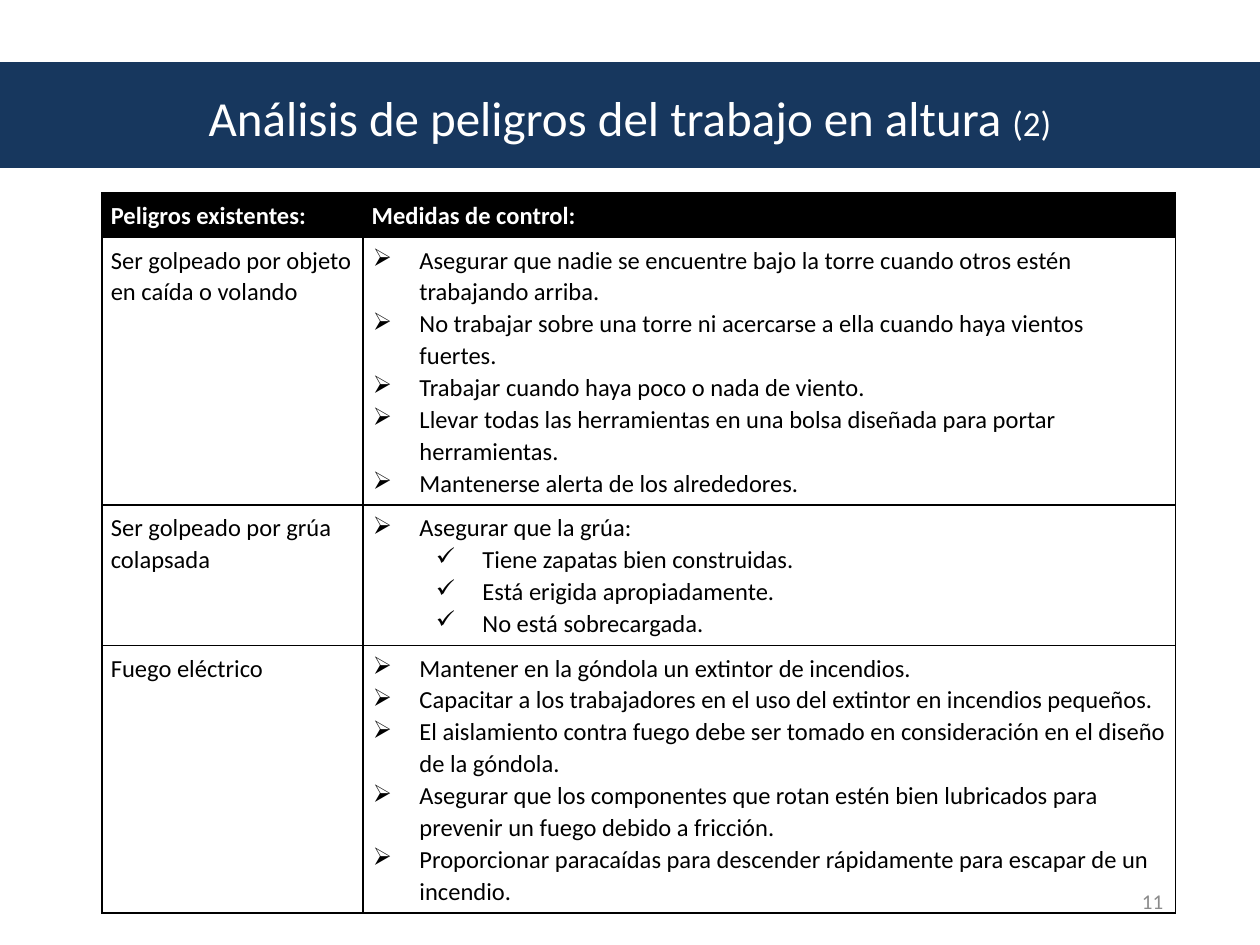
from dataclasses import dataclass

from lxml import etree
from pptx import Presentation
from pptx.dml.color import RGBColor
from pptx.enum.shapes import MSO_SHAPE
from pptx.enum.text import MSO_ANCHOR, PP_ALIGN
from pptx.oxml.ns import qn
from pptx.util import Inches, Pt

RECTANGLE = MSO_SHAPE.RECTANGLE
MIDDLE = MSO_ANCHOR.MIDDLE
LEFT, CENTER, RIGHT = PP_ALIGN.LEFT, PP_ALIGN.CENTER, PP_ALIGN.RIGHT
TITLE_ONLY = 5


@dataclass(frozen=True)
class Theme:
    """Colours, type sizes and spacing of the slide."""

    font: str = "Calibri"
    band: str = "17375E"
    light: str = "FFFFFF"
    dark: str = "000000"
    muted: str = "8B8B8B"
    title_size: float = 28
    part_size: float = 20
    body_size: float = 14
    number_size: float = 12
    line_spacing: float = 1.07
    border: float = 0.96


THEME = Theme()
SLIDE_WIDTH, SLIDE_HEIGHT = 10, 7.5
BAND_BOX = (0, 0.5, SLIDE_WIDTH, 0.83)
TITLE_BOX = (0.5, 0.3, 9, 1.25)
TABLE_BOX = (0.81, 1.53, 8.52, 5.26)
NUMBER_BOX = (7, 6.95, 2.33, 0.4)
COLUMN_WIDTHS = (2.07, 6.45)
ROW_HEIGHTS = (0.33, 1.87, 1.02, 2.04)
BULLETS = ("➢", "✓")
FIRST_INDENT, LEVEL_INDENT, HANGING = 0.38, 0.5, 0.37

HEADINGS = ("Peligros existentes:", "Medidas de control:")
HAZARDS = (
    ("Ser golpeado por objeto en caída o volando", (
        (0, "Asegurar que nadie se encuentre bajo la torre cuando otros estén trabajando arriba."),
        (0, "No trabajar sobre una torre ni acercarse a ella cuando haya vientos fuertes."),
        (0, "Trabajar cuando haya poco o nada de viento."),
        (0, "Llevar todas las herramientas en una bolsa diseñada para portar herramientas."),
        (0, "Mantenerse alerta de los alrededores."),
    )),
    ("Ser golpeado por grúa colapsada", (
        (0, "Asegurar que la grúa:"),
        (1, "Tiene zapatas bien construidas."),
        (1, "Está erigida apropiadamente."),
        (1, "No está sobrecargada."),
    )),
    ("Fuego eléctrico", (
        (0, "Mantener en la góndola un extintor de incendios."),
        (0, "Capacitar a los trabajadores en el uso del extintor en incendios pequeños."),
        (0, "El aislamiento contra fuego debe ser tomado en consideración en el diseño de la góndola."),
        (0, "Asegurar que los componentes que rotan estén bien lubricados para prevenir un fuego "
            "debido a fricción."),
        (0, "Proporcionar paracaídas para descender rápidamente para escapar de un incendio."),
    )),
)


def inches(box):
    """Convert a box in inches to lengths."""
    return [Inches(length) for length in box]


def color(value):
    """Return the colour for a hexadecimal value."""
    return RGBColor.from_string(value)


def format_paragraph(paragraph, size, font_color, bold=False, alignment=LEFT):
    """Set the font and alignment of a paragraph."""
    paragraph.alignment = alignment
    font = paragraph.font
    font.name, font.size, font.bold = THEME.font, Pt(size), bold
    font.color.rgb = color(font_color)


def add_bullet(paragraph, level):
    """Give a paragraph the hanging bullet of its level."""
    paragraph.level = level
    properties = paragraph._p.get_or_add_pPr()
    properties.set("marL", str(Inches(FIRST_INDENT + level * LEVEL_INDENT)))
    properties.set("indent", str(-Inches(HANGING)))
    bullet_color = etree.SubElement(properties, qn("a:buClr"))
    etree.SubElement(bullet_color, qn("a:srgbClr"), val=THEME.dark)
    etree.SubElement(properties, qn("a:buChar"), char=BULLETS[level])


def add_borders(cell):
    """Draw a thin line on the four sides of a cell."""
    properties = cell._tc.get_or_add_tcPr()
    for side in ("lnL", "lnR", "lnT", "lnB"):
        line = etree.SubElement(properties, qn(f"a:{side}"), w=str(Pt(THEME.border)))
        fill = etree.SubElement(line, qn("a:solidFill"))
        etree.SubElement(fill, qn("a:srgbClr"), val=THEME.dark)


def fill_cell(cell, items, heading=False):
    """Write items, each a level (None for no bullet) and a text, into a cell."""
    cell.margin_left = cell.margin_right = Inches(0.07)
    cell.margin_top = cell.margin_bottom = Inches(0.05)
    add_borders(cell)
    if heading:
        cell.fill.solid()
        cell.fill.fore_color.rgb = color(THEME.dark)
    else:
        cell.fill.background()
    frame = cell.text_frame
    for index, (level, text) in enumerate(items):
        paragraph = frame.add_paragraph() if index else frame.paragraphs[0]
        paragraph.add_run().text = text
        if level is not None:
            add_bullet(paragraph, level)
        paragraph.line_spacing = THEME.line_spacing
        format_paragraph(paragraph, THEME.body_size, THEME.light if heading else THEME.dark, heading)


def add_title(slide, band_box, title_box):
    """Place the title over its full-width band."""
    title = slide.shapes.title
    band = slide.shapes.add_shape(RECTANGLE, *inches(band_box))
    band.shadow.inherit = False
    band.fill.solid()
    band.fill.fore_color.rgb = band.line.color.rgb = color(THEME.band)
    band.line.width = Pt(0.75)
    title.element.addprevious(band.element)
    title.left, title.top, title.width, title.height = inches(title_box)
    title.text_frame.vertical_anchor = MIDDLE
    paragraph = title.text_frame.paragraphs[0]
    format_paragraph(paragraph, THEME.title_size, THEME.light, alignment=CENTER)
    paragraph.add_run().text = "Análisis de peligros del trabajo en altura "
    part = paragraph.add_run()
    part.text = "(2)"
    part.font.size = Pt(THEME.part_size)


def add_hazard_table(slide, box):
    """Place the table of hazards and control measures."""
    table = slide.shapes.add_table(len(ROW_HEIGHTS), len(COLUMN_WIDTHS), *inches(box)).table
    table.first_row = table.horz_banding = False
    for column, width in zip(table.columns, COLUMN_WIDTHS):
        column.width = Inches(width)
    for row, height in zip(table.rows, ROW_HEIGHTS):
        row.height = Inches(height)
    for column, heading in enumerate(HEADINGS):
        fill_cell(table.cell(0, column), [(None, heading)], heading=True)
    for row, (hazard, measures) in enumerate(HAZARDS, start=1):
        fill_cell(table.cell(row, 0), [(None, hazard)])
        fill_cell(table.cell(row, 1), measures)


def add_slide_number(slide, box):
    """Place the slide number at the lower right."""
    frame = slide.shapes.add_textbox(*inches(box)).text_frame
    frame.word_wrap = True
    frame.vertical_anchor = MIDDLE
    paragraph = frame.paragraphs[0]
    paragraph.add_run().text = "11"
    format_paragraph(paragraph, THEME.number_size, THEME.muted, alignment=RIGHT)


def main():
    """Build and save the presentation."""
    presentation = Presentation()
    presentation.slide_width, presentation.slide_height = inches((SLIDE_WIDTH, SLIDE_HEIGHT))
    slide = presentation.slides.add_slide(presentation.slide_layouts[TITLE_ONLY])
    add_title(slide, BAND_BOX, TITLE_BOX)
    add_hazard_table(slide, TABLE_BOX)
    add_slide_number(slide, NUMBER_BOX)
    presentation.save("out.pptx")


if __name__ == "__main__":
    main()
